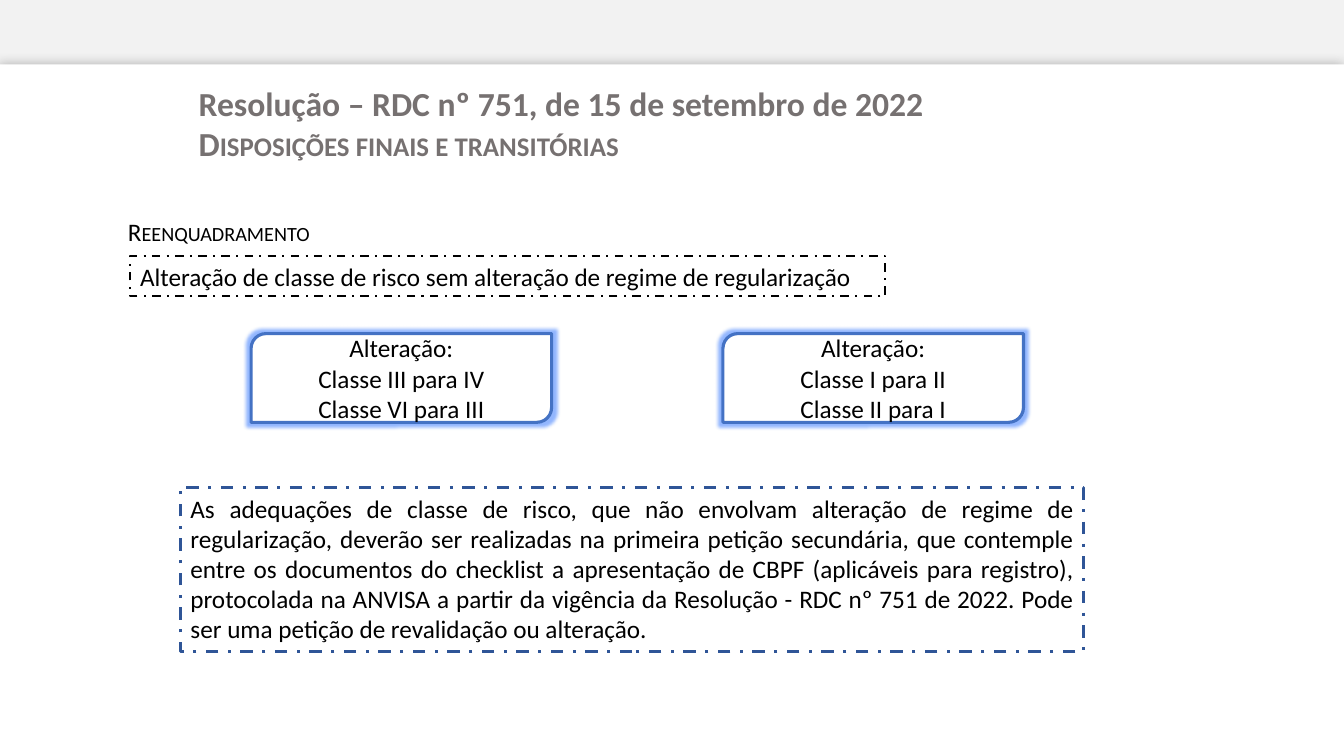
from lxml import etree
from pptx import Presentation, util as u
from pptx.dml.color import RGBColor
from pptx.enum import dml, shapes, text
from pptx.oxml.ns import qn

WIDTH, HEIGHT = u.Inches(13.33), u.Inches(7.5)
BODY = {"name": "Calibri", "size": u.Pt(18)}
TITLE = {"name": "Calibri", "size": u.Pt(24), "bold": True}


def color(target, hex_value):
    """Give a font, line or fill one solid colour."""
    fill = getattr(target, "fill", target)
    fill.solid()
    fill.fore_color.rgb = RGBColor.from_string(hex_value)


def place(left, top, width, height):
    """Turn percentages of the slide into lengths."""
    return [int(share * full / 100) for share, full in
            zip((left, top, width, height), (WIDTH, HEIGHT) * 2)]


def write(shape, lines, style=BODY, ink="000000", align=text.PP_ALIGN.LEFT,
          anchor=text.MSO_ANCHOR.TOP, small_caps=()):
    frame = shape.text_frame
    frame.word_wrap = True
    frame.vertical_anchor = anchor
    frame.text = "\n".join(lines)
    for index, paragraph in enumerate(frame.paragraphs):
        paragraph.alignment = align
        font = paragraph.runs[0].font
        for attribute, value in style.items():
            setattr(font, attribute, value)
        color(font, ink)
        if index in small_caps:
            paragraph.runs[0]._r.get_or_add_rPr().set("cap", "small")


def add_box(slide, area, kind=shapes.MSO_SHAPE.RECTANGLE, fill=None,
            line=None, weight=2.25, dash=None):
    box = slide.shapes.add_shape(kind, *place(*area))
    box.shadow.inherit = False
    if fill:
        color(box.fill, fill)
    else:
        box.fill.background()
    if line:
        color(box.line, line)
        box.line.width = u.Pt(weight)
        box.line.dash_style = dash
    else:
        box.line.fill.background()
    return box


def add_effect(shape, tag, hex_value, opacity, **sizes):
    """Put a glow or soft shadow around a shape; sizes are in points."""
    effects = shape._element.spPr.find(qn("a:effectLst"))
    effect = etree.SubElement(effects, qn(tag))
    for attribute, points in sizes.items():
        effect.set(attribute, str(u.Pt(points)))
    tint = etree.SubElement(effect, qn("a:srgbClr"), val=hex_value)
    etree.SubElement(tint, qn("a:alpha"), val=str(opacity * 1000))


def add_title(slide, area, lines):
    title = slide.shapes.title
    title.left, title.top, title.width, title.height = place(*area)
    write(title, lines, TITLE, "767171", small_caps=(1,))


def add_class_change(slide, area, changes):
    card = add_box(slide, area, shapes.MSO_SHAPE.ROUND_2_DIAG_RECTANGLE,
                   "FFFFFF", "4472C4")
    add_effect(card, "a:glow", "4A86FF", 60, rad=5)
    write(card, ["Alteração:", *changes], align=text.PP_ALIGN.CENTER,
          anchor=text.MSO_ANCHOR.MIDDLE)


def main():
    deck = Presentation()
    deck.slide_width, deck.slide_height = WIDTH, HEIGHT
    slide = deck.slides.add_slide(deck.slide_layouts[5])
    color(slide.background.fill, "F2F2F2")

    # White page under the grey band, behind the title
    page = add_box(slide, (0, 8.53, 100, 91.47), fill="FFFFFF")
    add_effect(page, "a:outerShdw", "A6A6A6", 85, blurRad=8)
    slide.shapes.title._element.addprevious(page._element)

    add_title(slide, (14.03, 10.27, 82.75, 12.13),
              ["Resolução – RDC nº 751, de 15 de setembro de 2022",
               "Disposições finais e transitórias"])

    # Topic and its summary
    topic = slide.shapes.add_textbox(*place(8.78, 28, 16.65, 5.47))
    write(topic, ["Reenquadramento"], small_caps=(0,))
    summary = add_box(slide, (9.68, 33.87, 56.19, 5.33), line="000000",
                      weight=1.5, dash=dml.MSO_LINE.DASH_DOT)
    write(summary, ["Alteração de classe de risco sem alteração de regime "
                    "de regularização"])

    # Class changes, side by side
    class_changes = [("Classe III para IV", "Classe VI para III"),
                     ("Classe I para II", "Classe II para I")]
    for column, changes in enumerate(class_changes):
        add_class_change(slide, (18.68 + 35.11 * column, 44.13, 22.36, 11.73),
                         changes)

    # Rule for the adjustments
    rule = add_box(slide, (13.43, 64.53, 67.22, 21.6), line="2F5597",
                   dash=dml.MSO_LINE.DASH_DOT)
    write(rule, ["As adequações de classe de risco, que não envolvam alteração "
                 "de regime de regularização, deverão ser realizadas na "
                 "primeira petição secundária, que contemple entre os "
                 "documentos do checklist a apresentação de CBPF (aplicáveis "
                 "para registro), protocolada na ANVISA a partir da vigência "
                 "da Resolução - RDC nº 751 de 2022. Pode ser uma petição de "
                 "revalidação ou alteração."], align=text.PP_ALIGN.JUSTIFY)

    deck.save("out.pptx")


if __name__ == "__main__":
    main()
